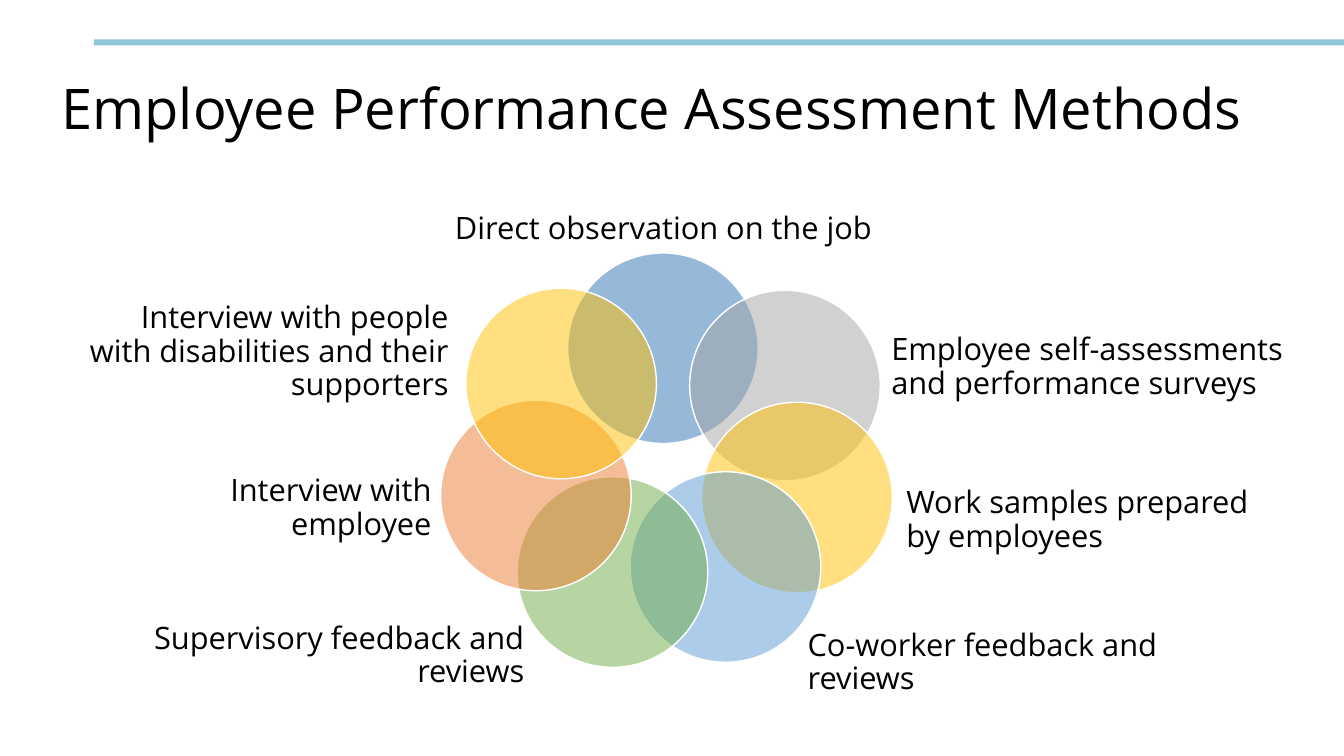
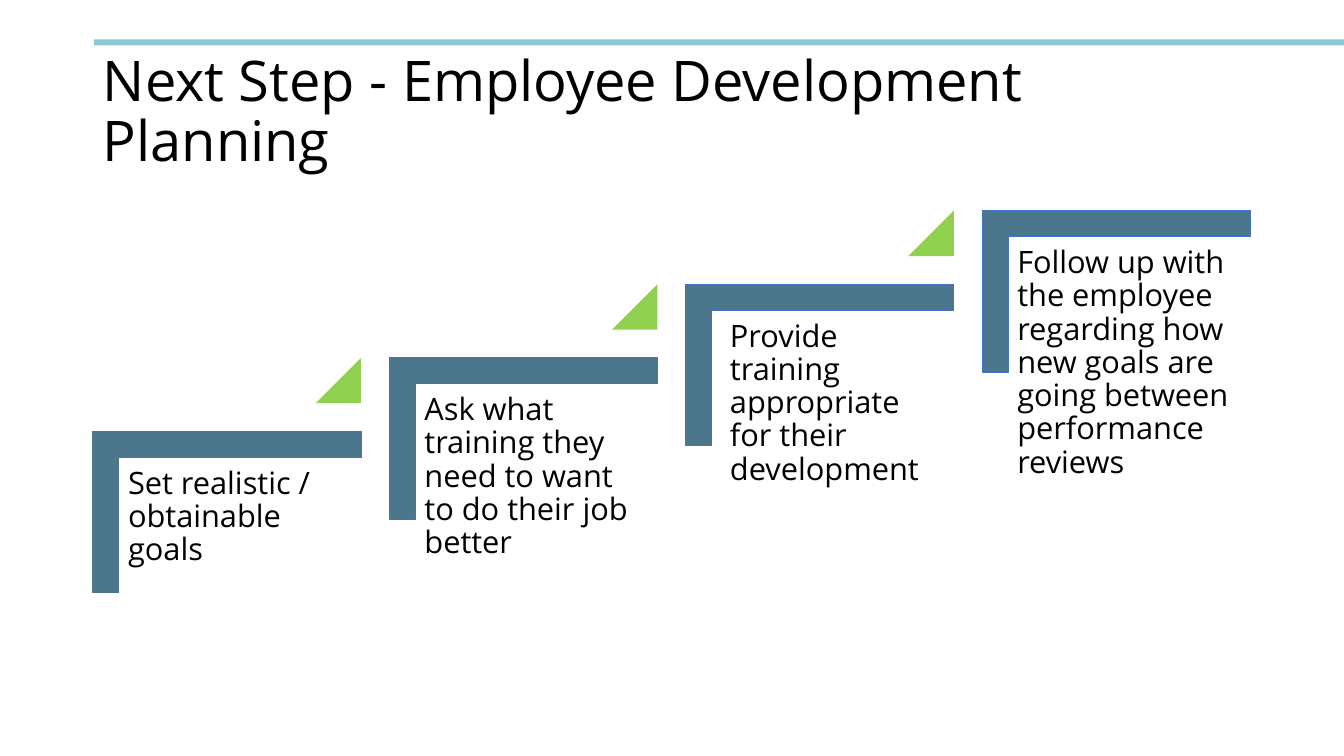
from dataclasses import dataclass

from lxml import etree
from pptx import Presentation
from pptx import util as u
from pptx.dml.color import RGBColor
from pptx.enum import shapes, text
from pptx.oxml import ns


@dataclass(frozen=True)
class Theme:
    font: str = "Open Sans"
    title_size: int = 40
    body_size: int = 22
    ink: str = "000000"
    white: str = "FFFFFF"
    band: str = "8EC7D7"
    step: str = "4C768C"
    step_edge: str = "4472C4"
    triangle: str = "92D050"
    blue: str = "2E75B6"
    gray: str = "A5A5A5"
    gold: str = "FFC000"
    sky: str = "5B9BD5"
    green: str = "70AD47"
    orange: str = "ED7D31"


theme = Theme()
LEFT, CENTER, RIGHT = text.PP_ALIGN.LEFT, text.PP_ALIGN.CENTER, text.PP_ALIGN.RIGHT
MIDDLE, TOP = text.MSO_ANCHOR.MIDDLE, text.MSO_ANCHOR.TOP


def add_figure(slide, kind, box, fill, line=None, line_width=1):
    """Add a preset shape with a solid fill and an optional outline."""
    shape = slide.shapes.add_shape(kind, *(u.Inches(value) for value in box))
    shape.shadow.inherit = False
    shape.fill.solid()
    shape.fill.fore_color.rgb = RGBColor.from_string(fill)
    if line:
        shape.line.color.rgb = RGBColor.from_string(line)
        shape.line.width = u.Pt(line_width)
    else:
        shape.line.fill.background()
    return shape


def write_text(shape, words, size, align=LEFT, anchor=MIDDLE, inset=0.0):
    """Write one paragraph in the shared text style."""
    frame = shape.text_frame
    frame.text = words
    paragraph = frame.paragraphs[0]
    margin = u.Inches(inset)
    formats = {
        frame: {"word_wrap": True, "auto_size": text.MSO_AUTO_SIZE.NONE,
                "vertical_anchor": anchor, "margin_left": margin, "margin_right": margin,
                "margin_top": margin, "margin_bottom": margin},
        paragraph: {"alignment": align, "line_spacing": 0.9},
        paragraph.runs[0].font: {"name": theme.font, "size": u.Pt(size)},
    }
    for target, values in formats.items():
        for name, value in values.items():
            setattr(target, name, value)
    paragraph.runs[0].font.color.rgb = RGBColor.from_string(theme.ink)


presentation = Presentation()
presentation.slide_width = u.Inches(13.33)
presentation.slide_height = u.Inches(7.5)
layout = presentation.slide_layouts[5]

# Titles of both slides
titles = [
    ("Employee Performance Assessment Methods", (0.51, 0.41, 12.54, 1.39)),
    ("Next Step - Employee Development Planning", (0.92, 0.4, 11.5, 1.45)),
]
for words, box in titles:
    slide = presentation.slides.add_slide(layout)
    title = slide.shapes.title
    title.left, title.top, title.width, title.height = (u.Inches(value) for value in box)
    write_text(title, words, theme.title_size, inset=0.1)
methods_slide, steps_slide = presentation.slides

# Top band, moved to the layout so that both slides share it
band = add_figure(methods_slide, shapes.MSO_SHAPE.RECTANGLE, (0.93, 0.39, 12.41, 0.06), theme.band)
layout.shapes.element.append(band.element)

# Slide 1: ring of overlapping circles, each with its label
diameter = 1.89
methods = [
    ("Direct observation on the job", theme.blue, (5.63, 2.51),
     (4.47, 1.96, 4.22, 0.63), CENTER),
    ("Employee self-assessments and performance surveys", theme.gray, (6.84, 2.88),
     (8.84, 3.24, 4.03, 0.81), LEFT),
    ("Work samples prepared by employees", theme.gold, (6.96, 3.99),
     (8.99, 4.48, 3.5, 1.37), LEFT),
    ("Co-worker feedback and reviews", theme.sky, (6.25, 4.68),
     (8.01, 5.95, 3.95, 1.25), LEFT),
    ("Supervisory feedback and reviews", theme.green, (5.13, 4.73),
     (1.07, 5.82, 4.13, 1.37), RIGHT),
    ("Interview with employee", theme.orange, (4.37, 3.97),
     (0.89, 4.44, 3.39, 1.21), RIGHT),
    ("Interview with people with disabilities and their supporters", theme.gold, (4.62, 2.86),
     (0.78, 2.83, 3.67, 1.33), RIGHT),
]
for words, color, corner, label_box, align in methods:
    circle = add_figure(methods_slide, shapes.MSO_SHAPE.OVAL, (*corner, diameter, diameter),
                        color, theme.white)
    # Half-transparent fill
    fill_color = circle.element.spPr.find(ns.qn("a:solidFill")).find(ns.qn("a:srgbClr"))
    etree.SubElement(fill_color, ns.qn("a:alpha"), val="50000")
    label = methods_slide.shapes.add_textbox(*(u.Inches(value) for value in label_box))
    write_text(label, words, theme.body_size, align)

# Slide 2: rising staircase of angle brackets, with a triangle between steps
step_right, step_up = 2.94, 0.73
steps = [
    # words, bracket outline, text shift from the bracket, text width
    ("Set realistic / obtainable goals", theme.step, -0.27, 2.4),
    ("Ask what training they need to want to do their job better", theme.step_edge, -0.27, 2.4),
    ("Provide training appropriate for their development", theme.step_edge, -0.18, 2.25),
    ("Follow up with the employee regarding how new goals are going between "
     "performance reviews", theme.step_edge, -0.27, 2.4),
]
for index, (words, edge, shift, width) in enumerate(steps):
    left = 1.45 + index * step_right
    top = 3.75 - index * step_up
    bracket = add_figure(steps_slide, shapes.MSO_SHAPE.CORNER, (left, top, 1.6, 2.66),
                         theme.step, edge, 0.5)
    bracket.rotation = 90
    bracket.adjustments[0] = bracket.adjustments[1] = 0.16
    text_box = (left + shift, top + 0.8, width, 2.11)
    label = steps_slide.shapes.add_textbox(*(u.Inches(value) for value in text_box))
    write_text(label, words, theme.body_size, anchor=TOP, inset=0.09)
    if index < len(steps) - 1:
        triangle = add_figure(steps_slide, shapes.MSO_SHAPE.ISOSCELES_TRIANGLE,
                              (left + 1.68, top - 0.2, 0.45, 0.45), theme.triangle)
        triangle.adjustments[0] = 1

presentation.save("out.pptx")
